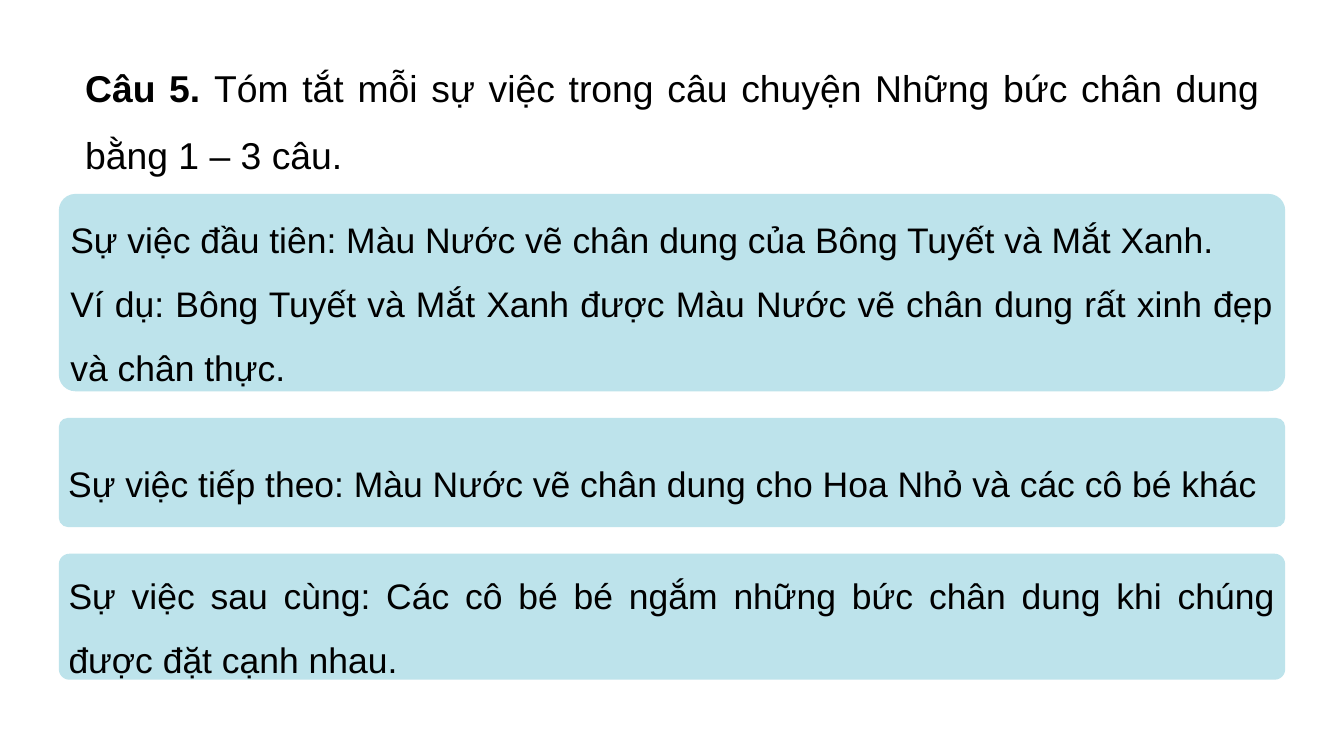
from pptx import Presentation
from pptx.dml.color import RGBColor as RGB
from pptx.enum.shapes import MSO_SHAPE as Kind
from pptx.enum.text import MSO_ANCHOR as Anchor, MSO_AUTO_SIZE as Fit, PP_ALIGN as Align
from pptx.util import Emu, Pt

PX = 9525
LEFT, TOP, WIDTH, GAP = 84, 277, 1752, 38
HEAD = [("Câu 5. ", True),
        ("Tóm tắt mỗi sự việc trong câu chuyện Những bức chân dung bằng 1 – 3 câu.", False)]
CARDS = [
    (282, ["Sự việc đầu tiên: Màu Nước vẽ chân dung của Bông Tuyết và Mắt Xanh.",
           "Ví dụ: Bông Tuyết và Mắt Xanh được Màu Nước vẽ chân dung rất xinh đẹp và chân thực."]),
    (156, ["Sự việc tiếp theo: Màu Nước vẽ chân dung cho Hoa Nhỏ và các cô bé khác"]),
    (180, ["Sự việc sau cùng: Các cô bé bé ngắm những bức chân dung khi chúng được đặt cạnh nhau."]),
]


def px(n):
    return Emu(n * PX)


def tint(code):
    return RGB.from_string(code)


def put(obj, vals):
    for key, val in vals.items():
        setattr(obj, key, val)


class Deck:
    """Holds the style and the current slide."""

    font, ink, fill = "Arial", "000000", "BDE3EB"
    para = {"alignment": Align.JUSTIFY, "line_spacing": 1.5}

    def __init__(self, wide, high):
        self.prs = Presentation()
        put(self.prs, {"slide_width": px(wide), "slide_height": px(high)})
        self.slide = self.prs.slides.add_slide(self.prs.slide_layouts[5])

    def text(self, frame, paras, size, anchor, fit):
        put(frame, {"word_wrap": True, "auto_size": fit, "vertical_anchor": anchor})
        for i, runs in enumerate(paras):
            para = frame.add_paragraph() if i else frame.paragraphs[0]
            put(para, self.para)
            for words, bold in runs:
                run = para.add_run()
                run.text = words
                put(run.font, {"name": self.font, "size": Pt(size), "bold": bold})
                run.font.color.rgb = tint(self.ink)

    def title(self, box, runs):
        shape = self.slide.shapes.title
        put(shape, dict(zip(("left", "top", "width", "height"), map(px, box))))
        self.text(shape.text_frame, [runs], 40, Anchor.TOP, Fit.SHAPE_TO_FIT_TEXT)

    def card(self, box, lines):
        shape = self.slide.shapes.add_shape(Kind.ROUNDED_RECTANGLE, *map(px, box))
        shape.adjustments[0] = 0.084
        shape.shadow.inherit = False
        shape.fill.solid()
        shape.fill.fore_color.rgb = tint(self.fill)
        shape.line.fill.background()
        paras = [[(line, False)] for line in lines]
        self.text(shape.text_frame, paras, 38, Anchor.MIDDLE, Fit.NONE)


def main():
    deck = Deck(1920, 1080)
    deck.title((112, 56, 1696, 192), HEAD)
    top = TOP
    for high, lines in CARDS:
        deck.card((LEFT, top, WIDTH, high), lines)
        top += high + GAP
    deck.prs.save("out.pptx")


if __name__ == "__main__":
    main()
